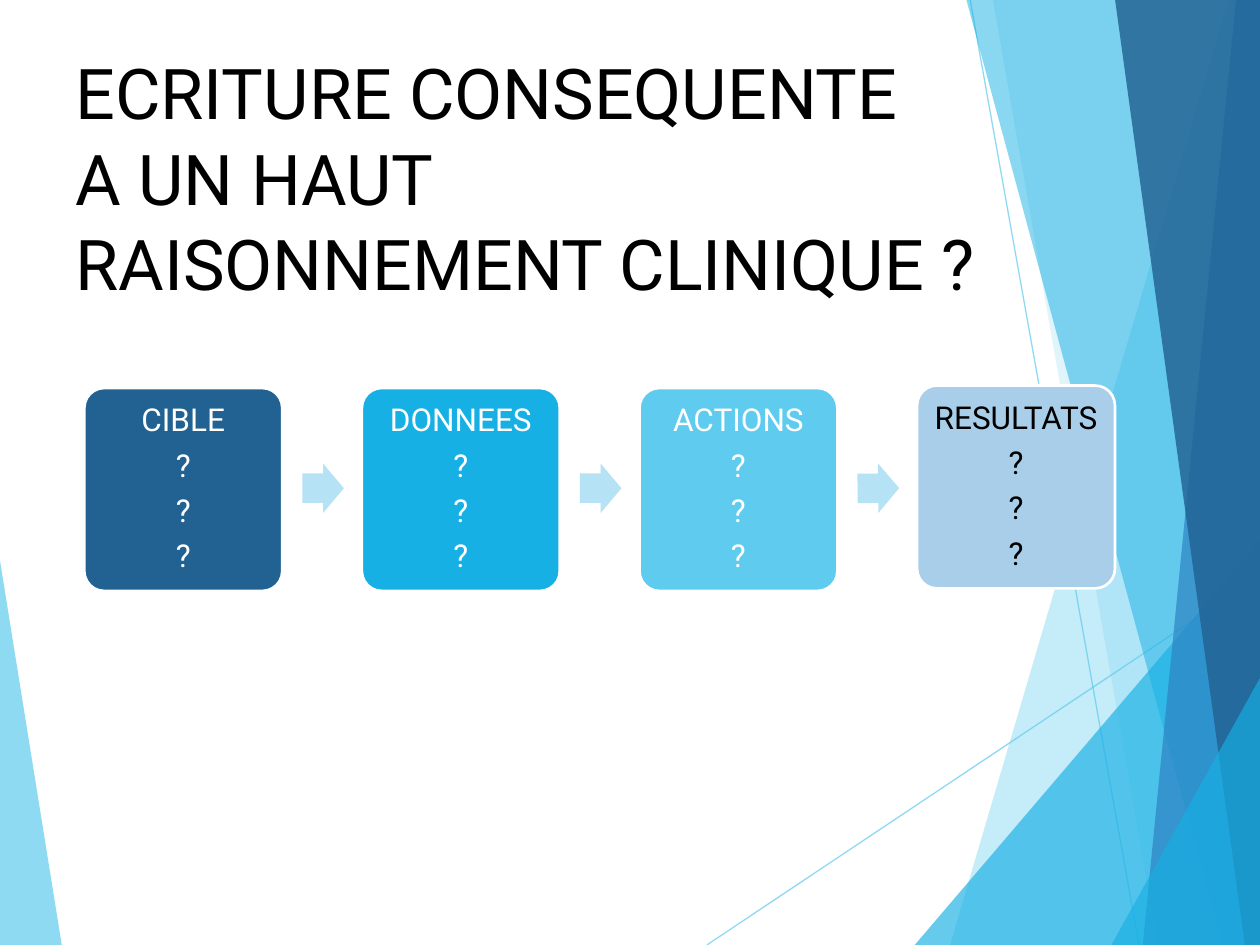
from dataclasses import dataclass

from lxml.etree import SubElement
from pptx import Presentation
from pptx.dml.color import RGBColor
from pptx.enum.shapes import MSO_CONNECTOR, MSO_SHAPE
from pptx.enum.text import MSO_ANCHOR, MSO_AUTO_SIZE, PP_ALIGN
from pptx.oxml.ns import qn
from pptx.util import Inches, Pt


@dataclass(frozen=True)
class Theme:
    font: str = "Roboto"
    title_size: int = 40
    card_size: int = 18
    black: str = "000000"
    white: str = "FFFFFF"
    navy: str = "226292"
    blue: str = "2E83C3"
    azure: str = "17B0E4"
    sky: str = "5FCBEF"
    pale: str = "A8CEEA"
    arrow: str = "B6E2F6"


class SlideBuilder:
    """Draws styled elements on a slide measured as 100 columns by 75 rows."""

    columns, rows = 100, 75

    def __init__(self, deck, theme):
        self.theme = theme
        self.column = deck.slide_width / self.columns
        self.row = deck.slide_height / self.rows
        self.slide = deck.slides.add_slide(deck.slide_layouts[5])
        self.shapes = self.slide.shapes

    def point(self, x, y):
        return round(x * self.column), round(y * self.row)

    def frame(self, left, top, width, height):
        return *self.point(left, top), *self.point(width, height)

    def fade(self, shape, opacity):
        color = shape.element.spPr.find(".//" + qn("a:srgbClr"))
        SubElement(color, qn("a:alpha"), val=str(opacity * 1000))

    def paint(self, shape, color):
        shape.shadow.inherit = False
        shape.fill.solid()
        shape.fill.fore_color.rgb = RGBColor.from_string(color)
        shape.line.fill.background()

    def facet(self, points, color, opacity):
        start, *others = [self.point(*corner) for corner in points]
        outline = self.shapes.build_freeform(*start)
        outline.add_line_segments(others)
        shape = outline.convert_to_shape()
        self.paint(shape, color)
        self.fade(shape, opacity)

    def ray(self, start, end, color, opacity):
        line = self.shapes.add_connector(
            MSO_CONNECTOR.STRAIGHT, *self.point(*start), *self.point(*end))
        line.line.color.rgb = RGBColor.from_string(color)
        line.line.width = Pt(0.75)
        self.fade(line, opacity)
        SubElement(line.element.spPr, qn("a:effectLst"))

    def style(self, para, size, color, align):
        para.alignment = align
        para.font.name = self.theme.font
        para.font.size = Pt(size)
        para.font.color.rgb = RGBColor.from_string(color)

    def title(self, text, left, top, width, height):
        box = self.shapes.title
        box.left, box.top, box.width, box.height = self.frame(left, top, width, height)
        frame = box.text_frame
        frame.auto_size = MSO_AUTO_SIZE.NONE
        frame.word_wrap = True
        frame.vertical_anchor = MSO_ANCHOR.TOP
        frame.margin_top = Inches(0.08)
        para = frame.paragraphs[0]
        para.text = text
        para.line_spacing = 1.02
        self.style(para, self.theme.title_size, self.theme.black, PP_ALIGN.LEFT)

    def card(self, lines, fill, ink, left, top, width, height):
        box = self.shapes.add_shape(
            MSO_SHAPE.ROUNDED_RECTANGLE, *self.frame(left, top, width, height))
        box.adjustments[0] = 0.1
        self.paint(box, fill)
        box.line.color.rgb = RGBColor.from_string(self.theme.white)
        box.line.width = Pt(1.5)
        frame = box.text_frame
        frame.word_wrap = True
        frame.vertical_anchor = MSO_ANCHOR.MIDDLE
        frame.margin_left = frame.margin_right = Inches(0.07)
        frame.margin_top = frame.margin_bottom = Inches(0.07)
        frame.text = "\n".join(lines)
        for para in frame.paragraphs:
            para.line_spacing = 0.9
            para.space_after = Pt(6.5)
            self.style(para, self.theme.card_size, ink, PP_ALIGN.CENTER)

    def arrow(self, left, top, width, height, rotation):
        shape = self.shapes.add_shape(
            MSO_SHAPE.RIGHT_ARROW, *self.frame(left, top, width, height))
        shape.adjustments[0] = 0.6
        shape.rotation = rotation
        self.paint(shape, self.theme.arrow)


def draw_backdrop(page):
    theme = page.theme
    bottom, right = page.rows, page.columns
    page.facet([(0, 44.5), (4.9, bottom), (0, bottom)], theme.sky, 70)
    page.ray((56.1, bottom), (right, 45.7), theme.sky, 70)
    page.ray((77, 0), (90.4, bottom), theme.sky, 70)
    facets = [
        (97.5, 0, 75.4, 0, theme.sky, 36),
        (78.8, 0, 91.9, 0, theme.sky, 20),
        (right, 42.9, 72.6, 42.9, theme.azure, 66),
        (76.7, 0, 97, 0, theme.azure, 50),
        (98.1, 0, 90.7, 0, theme.blue, 70),
        (88.5, 0, 98.8, 0, theme.navy, 82),
        (right, 53.8, 88.2, 53.8, theme.azure, 66),
    ]
    for upper, top, lower, edge, color, opacity in facets:
        corners = [(upper, top), (lower, bottom), (right, bottom), (right, edge)]
        page.facet(corners, color, opacity)


def draw_process(page):
    theme = page.theme
    steps = [
        ("CIBLE", theme.navy, theme.white),
        ("DONNEES", theme.azure, theme.white),
        ("ACTIONS", theme.sky, theme.white),
        ("RESULTATS", theme.pale, theme.black),
    ]
    last = len(steps) - 1
    pitch = 22.03
    for index, (name, fill, ink) in enumerate(steps):
        left = 6.7 + index * pitch
        top = 30.6 if index == last else 30.8
        page.card([name] + ["?"] * 3, fill, ink, left, top, 15.7, 16.1)
        if index < last:
            rotation = -0.4 if index == last - 1 else 0
            page.arrow(left + 17.3, 36.8, 3.3, 3.9, rotation)


def main():
    deck = Presentation()
    deck.slide_width, deck.slide_height = Inches(10), Inches(7.5)
    page = SlideBuilder(deck, Theme())
    draw_backdrop(page)
    page.title("ECRITURE CONSEQUENTE\vA UN HAUT\vRAISONNEMENT CLINIQUE ?", 5, 3, 90, 25)
    draw_process(page)
    deck.save("out.pptx")


if __name__ == "__main__":
    main()
